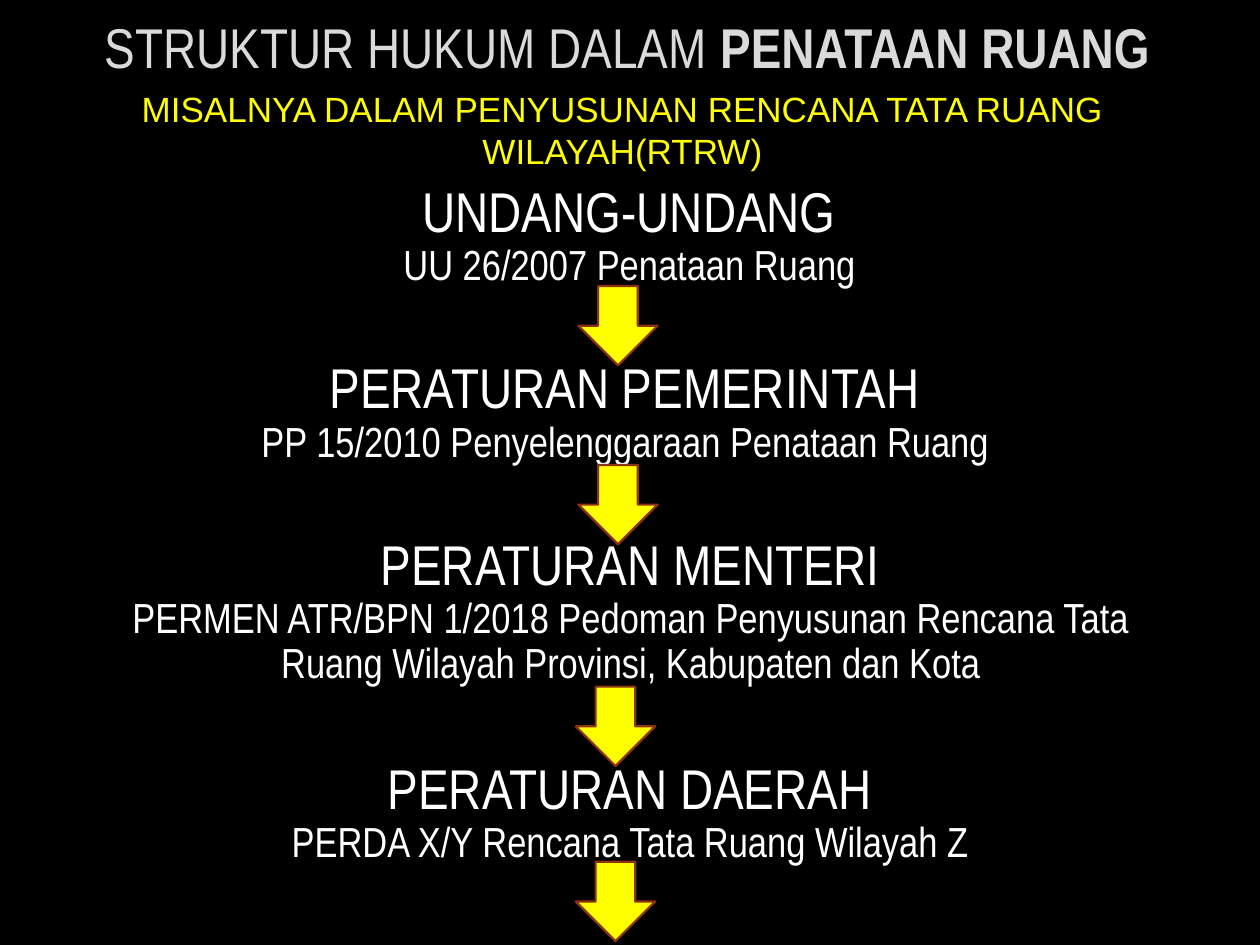
from dataclasses import dataclass

from pptx import Presentation
from pptx.dml.color import RGBColor
from pptx.enum.shapes import MSO_SHAPE as Preset
from pptx.enum.text import MSO_ANCHOR as Anchor, PP_ALIGN as Align
from pptx.slide import Slide
from pptx.text.text import TextFrame
from pptx.util import Inches, Length, Pt

BLACK = RGBColor(0x00, 0x00, 0x00)
WHITE = RGBColor(0xFF, 0xFF, 0xFF)
SILVER = RGBColor(0xDA, 0xDA, 0xDA)
YELLOW = RGBColor(0xFF, 0xFF, 0x00)
RUST = RGBColor(0x8B, 0x33, 0x14)

NARROW = "Arial Narrow"
COLUMNS, ROWS = 100, 75
UNIT = Inches(10) // COLUMNS
ARROW_SIZE = 6.3


@dataclass(frozen=True)
class Box:
    column: float
    row: float
    columns: float
    rows: float

    def lengths(self) -> tuple[Length, ...]:
        return tuple(Length(round(value * UNIT)) for value in
                     (self.column, self.row, self.columns, self.rows))


@dataclass(frozen=True)
class Regulation:
    heading: str
    example: str
    box: Box
    arrow_column: float
    arrow_row: float


REGULATIONS = (
    Regulation("UNDANG-UNDANG", "UU 26/2007 Penataan Ruang",
               Box(29, 14.1, 41.9, 9.5), 45.9, 22.7),
    Regulation("PERATURAN PEMERINTAH", "PP 15/2010 Penyelenggaraan Penataan Ruang",
               Box(17.7, 28.1, 63.8, 9.5), 45.9, 36.9),
    Regulation("PERATURAN MENTERI",
               "PERMEN ATR/BPN 1/2018 Pedoman Penyusunan Rencana Tata "
               "Ruang Wilayah Provinsi, Kabupaten dan Kota",
               Box(8.3, 42.1, 83.5, 13.1), 45.7, 54.5),
    Regulation("PERATURAN DAERAH", "PERDA X/Y Rencana Tata Ruang Wilayah Z",
               Box(18.1, 59.9, 63.8, 9.5), 45.7, 68.4),
)


def add_text_frame(slide: Slide, box: Box, anchor: Anchor = Anchor.TOP) -> TextFrame:
    frame = slide.shapes.add_textbox(*box.lengths()).text_frame
    frame.word_wrap = True
    frame.vertical_anchor = anchor
    return frame


def add_text(paragraph, text: str, *, size: float, color: RGBColor = WHITE,
             font: str = NARROW, bold: bool = False, spacing: float = 1.0) -> None:
    paragraph.alignment = Align.CENTER
    paragraph.line_spacing = spacing
    run = paragraph.add_run()
    run.text = text
    run.font.name = font
    run.font.size = Pt(size)
    run.font.bold = bold
    run.font.color.rgb = color


def add_arrow(slide: Slide, column: float, row: float) -> None:
    box = Box(column, row, ARROW_SIZE, ARROW_SIZE)
    arrow = slide.shapes.add_shape(Preset.DOWN_ARROW, *box.lengths())
    arrow.shadow.inherit = False
    arrow.fill.solid()
    arrow.fill.fore_color.rgb = YELLOW
    arrow.line.color.rgb = RUST
    arrow.line.width = Pt(1.25)


def add_regulation(slide: Slide, regulation: Regulation) -> None:
    frame = add_text_frame(slide, regulation.box)
    add_text(frame.paragraphs[0], regulation.heading, size=32, spacing=0.9)
    add_text(frame.add_paragraph(), regulation.example, size=24, spacing=0.9)


def main() -> None:
    presentation = Presentation()
    presentation.slide_width = COLUMNS * UNIT
    presentation.slide_height = ROWS * UNIT
    slide = presentation.slides.add_slide(presentation.slide_layouts[6])
    slide.background.fill.solid()
    slide.background.fill.fore_color.rgb = BLACK

    title = add_text_frame(slide, Box(0.8, 0.3, 98, 6.5), Anchor.BOTTOM).paragraphs[0]
    add_text(title, "STRUKTUR HUKUM DALAM ", size=32, color=SILVER)
    add_text(title, "PENATAAN RUANG", size=32, color=SILVER, bold=True)

    subtitle = add_text_frame(slide, Box(5.7, 6.4, 87.4, 7.7), Anchor.MIDDLE).paragraphs[0]
    add_text(subtitle, "MISALNYA DALAM PENYUSUNAN RENCANA TATA RUANG WILAYAH(RTRW)",
             size=20, color=YELLOW, font="Arial")

    for regulation in REGULATIONS:
        add_regulation(slide, regulation)
    for regulation in REGULATIONS:
        add_arrow(slide, regulation.arrow_column, regulation.arrow_row)

    presentation.save("out.pptx")


if __name__ == "__main__":
    main()
